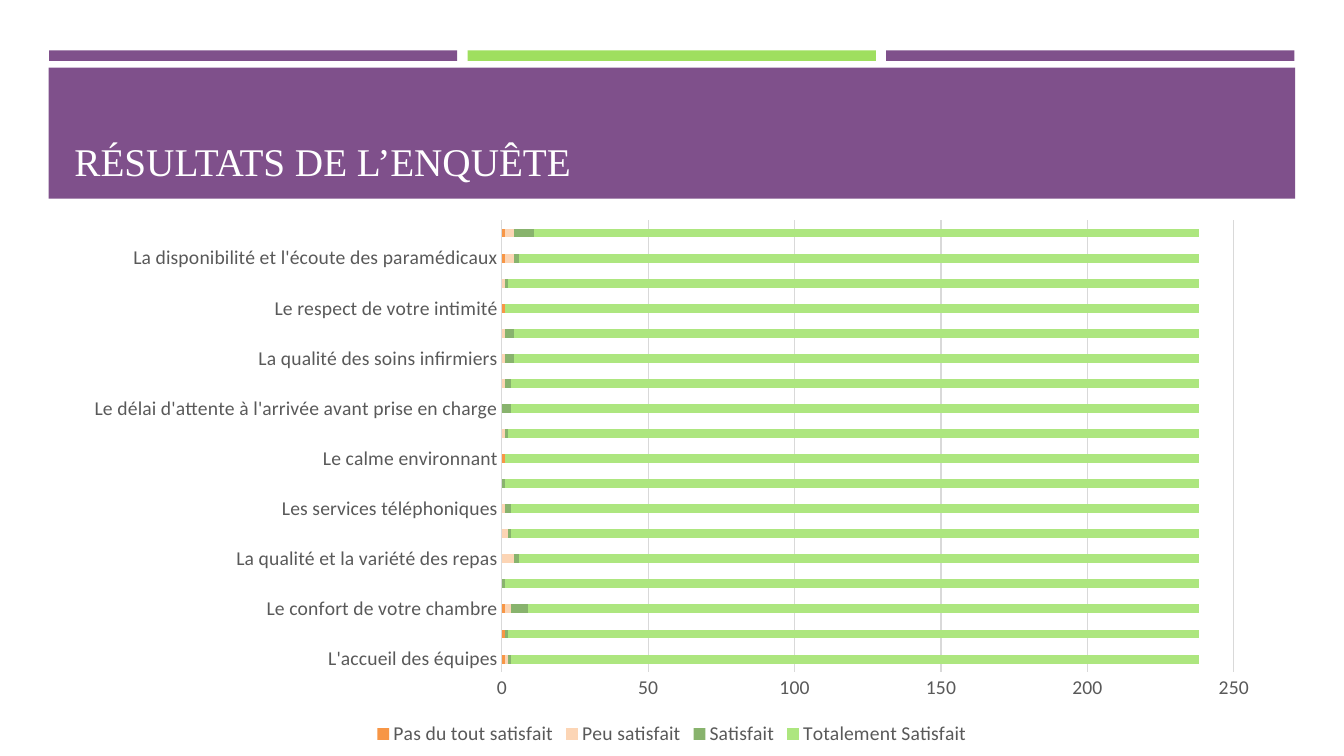
import pptx
import pptx.chart.data
import pptx.dml.color
import pptx.enum.chart
import pptx.enum.shapes
import pptx.enum.text
import pptx.util

Pt = pptx.util.Pt
RGBColor = pptx.dml.color.RGBColor

PURPLE = RGBColor(0x7F, 0x50, 0x8B)
GREEN = RGBColor(0x9F, 0xDF, 0x5F)
WHITE = RGBColor(0xFF, 0xFF, 0xFF)
TEXT_GREY = RGBColor(0x59, 0x59, 0x59)
LINE_GREY = RGBColor(0xD9, 0xD9, 0xD9)
ORANGE = RGBColor(0xF7, 0x96, 0x46)
PEACH = RGBColor(0xFC, 0xD5, 0xB5)
DARK_GREEN = RGBColor(0x88, 0xB3, 0x6D)
LIGHT_GREEN = RGBColor(0xAD, 0xE6, 0x7F)

# Survey: question, then answers from least to most satisfied
SURVEY = [
    ("L'accueil des équipes", 1, 1, 1, 235),
    ("La propreté de votre chambre", 1, 0, 1, 236),
    ("Le confort de votre chambre", 1, 2, 6, 229),
    ("La qualité du linge fourni", None, None, 1, 237),
    ("La qualité et la variété des repas", None, 4, 2, 232),
    ("La quantité des repas", None, 2, 1, 235),
    ("Les services téléphoniques", None, 1, 2, 235),
    ("Les services de télévision", None, None, 1, 237),
    ("Le calme environnant", 1, None, None, 237),
    ("Les conditions de visite des proches", None, 1, 1, 236),
    ("Le délai d'attente à l'arrivée avant prise en charge", None, None, 3, 235),
    ("La qualité de la prise en charge par le praticien", None, 1, 2, 235),
    ("La qualité des soins infirmiers", None, 1, 3, 234),
    ("La prise en charge de la douleur", None, 1, 3, 234),
    ("Le respect de votre intimité", 1, None, None, 237),
    ("La disponibilité et l'écoute du médecin", None, 1, 1, 236),
    ("La disponibilité et l'écoute des paramédicaux", 1, 3, 2, 232),
    ("La qualité de votre séjour", 1, 3, 7, 227),
]
ANSWERS = [
    ("Pas du tout satisfait", ORANGE),
    ("Peu satisfait", PEACH),
    ("Satisfait", DARK_GREEN),
    ("Totalement Satisfait", LIGHT_GREEN),
]


def add_band(slide, left, top, width, height, color):
    band = slide.shapes.add_shape(
        pptx.enum.shapes.MSO_SHAPE.RECTANGLE, Pt(left), Pt(top), Pt(width), Pt(height))
    band.shadow.inherit = False
    band.fill.solid()
    band.fill.fore_color.rgb = color
    band.line.fill.background()


def format_title(slide, text):
    title = slide.shapes.title
    # Bring the title in front of its banner
    slide.shapes.element.append(title.element)
    title.left, title.top, title.width, title.height = Pt(46), Pt(55.5), Pt(868), Pt(80)
    frame = title.text_frame
    frame.word_wrap = True
    frame.auto_size = pptx.enum.text.MSO_AUTO_SIZE.NONE
    frame.vertical_anchor = pptx.enum.text.MSO_ANCHOR.BOTTOM
    paragraph = frame.paragraphs[0]
    paragraph.alignment = pptx.enum.text.PP_ALIGN.LEFT
    run = paragraph.add_run()
    run.text = text
    run.font.name = "Times New Roman"
    run.font.size = Pt(28)
    run.font.color.rgb = WHITE


def format_font(font):
    font.name = "Calibri"
    font.size = Pt(14)
    font.color.rgb = TEXT_GREY


def format_axis(axis):
    axis.major_tick_mark = pptx.enum.chart.XL_TICK_MARK.NONE
    axis.minor_tick_mark = pptx.enum.chart.XL_TICK_MARK.NONE
    format_font(axis.tick_labels.font)


def format_line(line):
    line.color.rgb = LINE_GREY
    line.width = Pt(0.75)


def add_survey_chart(slide):
    questions, *answer_counts = zip(*SURVEY)
    data = pptx.chart.data.CategoryChartData()
    data.categories = questions
    for (name, _), counts in zip(ANSWERS, answer_counts):
        data.add_series(name, counts)
    chart = slide.shapes.add_chart(
        pptx.enum.chart.XL_CHART_TYPE.BAR_STACKED,
        Pt(50.4), Pt(149.8), Pt(859), Pt(386), data).chart
    format_font(chart.font)
    chart.has_title = False

    # Bars
    plot = chart.plots[0]
    plot.gap_width = 182
    plot.overlap = 100
    plot.vary_by_categories = False
    for series, (_, color) in zip(plot.series, ANSWERS):
        series.format.fill.solid()
        series.format.fill.fore_color.rgb = color

    # Axes
    format_axis(chart.category_axis)
    format_line(chart.category_axis.format.line)
    format_axis(chart.value_axis)
    chart.value_axis.format.line.fill.background()
    chart.value_axis.has_major_gridlines = True
    format_line(chart.value_axis.major_gridlines.format.line)

    # Legend
    chart.has_legend = True
    chart.legend.position = pptx.enum.chart.XL_LEGEND_POSITION.BOTTOM
    chart.legend.include_in_layout = False
    format_font(chart.legend.font)


def main():
    presentation = pptx.Presentation()
    presentation.slide_width, presentation.slide_height = Pt(960), Pt(540)
    slide = presentation.slides.add_slide(presentation.slide_layouts[5])

    # Top stripes and title banner
    for column, color in enumerate((PURPLE, GREEN, PURPLE)):
        add_band(slide, 35 + 299 * column, 36, 291.6, 7.5, color)
    add_band(slide, 34.8, 48.4, 890.4, 93.6, PURPLE)
    format_title(slide, "RÉSULTATS DE L’ENQUÊTE")

    add_survey_chart(slide)
    presentation.save("out.pptx")


if __name__ == "__main__":
    main()
